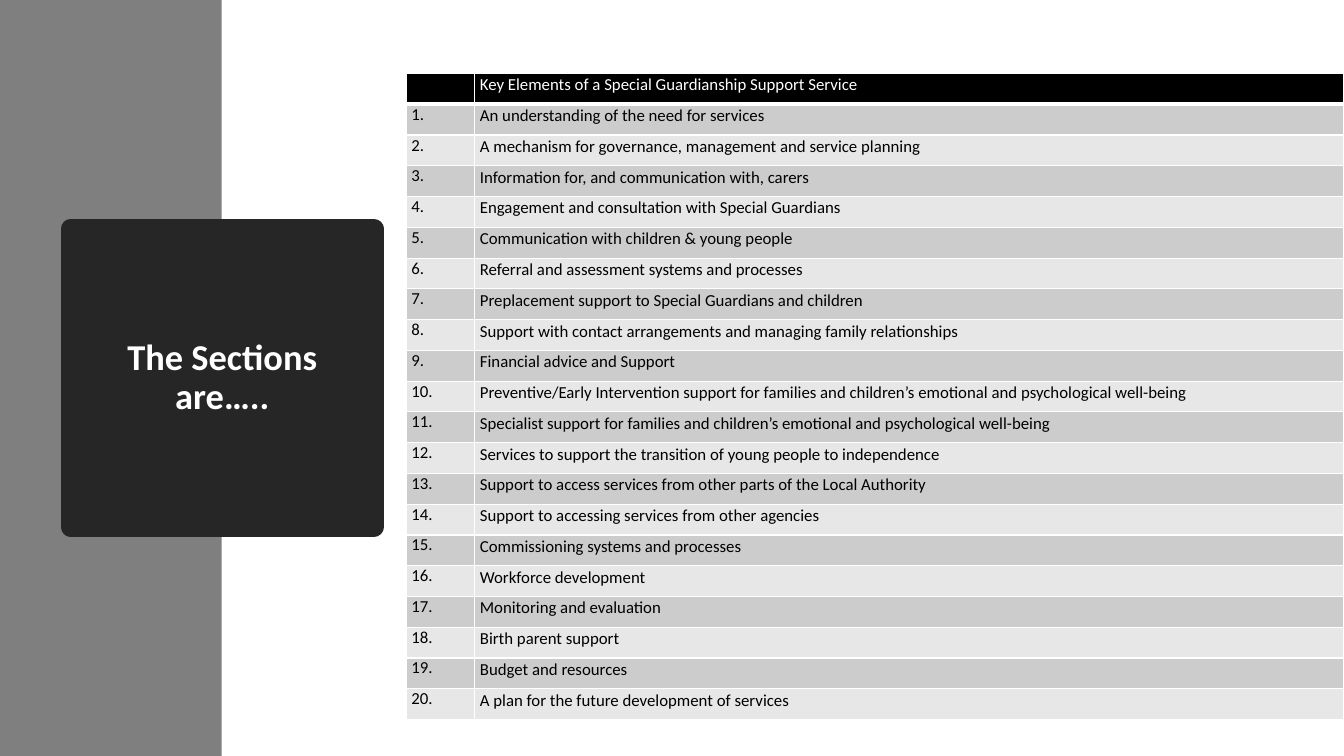
"""Build the slide listing the sections of a support service."""
from dataclasses import dataclass

from lxml import etree
from pptx import Presentation
from pptx.dml.color import RGBColor
from pptx.enum.shapes import MSO_SHAPE
from pptx.enum.text import MSO_ANCHOR, PP_ALIGN
from pptx.oxml.ns import qn
from pptx.util import Inches, Pt

RECT = MSO_SHAPE.RECTANGLE
MIDDLE = MSO_ANCHOR.MIDDLE
LEFT, CENTER, JUSTIFY = PP_ALIGN.LEFT, PP_ALIGN.CENTER, PP_ALIGN.JUSTIFY

WHITE = RGBColor(0xFF, 0xFF, 0xFF)
BLACK = RGBColor(0x00, 0x00, 0x00)
GRAY = RGBColor(0x7F, 0x7F, 0x7F)
CHARCOAL = RGBColor(0x26, 0x26, 0x26)
BAND_DARK = RGBColor(0xCC, 0xCC, 0xCC)
BAND_LIGHT = RGBColor(0xE7, 0xE7, 0xE7)

HEADING = "Key Elements of a Special Guardianship Support Service"
SECTIONS = [
    "An understanding of the need for services",
    "A mechanism for governance, management and service planning",
    "Information for, and communication with, carers",
    "Engagement and consultation with Special Guardians",
    "Communication with children & young people",
    "Referral and assessment systems and processes",
    "Preplacement support to Special Guardians and children",
    "Support with contact arrangements and managing family relationships",
    "Financial advice and Support",
    "Preventive/Early Intervention support for families and children’s emotional and psychological well-being",
    "Specialist support for families and children’s emotional and psychological well-being",
    "Services to support the transition of young people to independence",
    "Support to access services from other parts of the Local Authority",
    "Support to accessing services from other agencies",
    "Commissioning systems and processes",
    "Workforce development",
    "Monitoring and evaluation",
    "Birth parent support",
    "Budget and resources",
    "A plan for the future development of services",
]
COLUMN_WIDTHS = [0.68, 8.62]
TABLE_HEIGHT = 6.41
NUMBER_FORMAT = {"alignment": JUSTIFY}
SECTION_FORMAT = {"alignment": LEFT, "line_spacing": 1.07, "space_after": Pt(8)}
CELL_MARGINS = {
    "margin_left": Inches(0.05),
    "margin_right": Inches(0.05),
    "margin_top": 0,
    "margin_bottom": 0,
}


@dataclass
class Panel:
    left: float
    top: float
    width: float
    height: float
    fill: RGBColor


@dataclass
class Row:
    number: str
    text: str
    fill: RGBColor
    color: RGBColor = BLACK
    bottom_border: float = 1


def set_attributes(target, values: dict) -> None:
    for name, value in values.items():
        setattr(target, name, value)


def add_text(p, text: str, size: float, color: RGBColor, bold: bool = False) -> None:
    r = p.add_run()
    r.text = text
    set_attributes(r.font, {"name": "Calibri", "size": Pt(size), "bold": bold})
    r.font.color.rgb = color


def add_panel(slide, panel: Panel):
    sp = slide.shapes.add_shape(RECT, Inches(panel.left), Inches(panel.top),
                                Inches(panel.width), Inches(panel.height))
    sp.shadow.inherit = False
    sp.fill.solid()
    sp.fill.fore_color.rgb = panel.fill
    sp.line.fill.background()
    return sp


def add_title(slide, panel: Panel, text: str) -> None:
    sp = add_panel(slide, panel)
    sp.line.color.rgb = panel.fill
    sp.line.width = Pt(13.75)
    etree.SubElement(sp._element.spPr.find(qn("a:ln")), qn("a:round"))
    tf = sp.text_frame
    set_attributes(tf, {"word_wrap": True, "vertical_anchor": MIDDLE,
                        "margin_left": Inches(0.2), "margin_right": Inches(0.2)})
    p = tf.paragraphs[0]
    set_attributes(p, {"alignment": CENTER, "line_spacing": 0.9})
    add_text(p, text, 26, WHITE, True)


def add_borders(cell, bottom: float) -> None:
    tc_pr = cell._tc.get_or_add_tcPr()
    for side, width in {"L": 1, "R": 1, "T": 1, "B": bottom}.items():
        ln = etree.SubElement(tc_pr, qn(f"a:ln{side}"), w=str(Pt(width)))
        fill = etree.SubElement(ln, qn("a:solidFill"))
        etree.SubElement(fill, qn("a:srgbClr"), val=str(WHITE))


def fill_cell(cell, text: str, row: Row, paragraph_format: dict) -> None:
    set_attributes(cell, CELL_MARGINS)
    add_borders(cell, row.bottom_border)
    cell.fill.solid()
    cell.fill.fore_color.rgb = row.fill
    p = cell.text_frame.paragraphs[0]
    set_attributes(p, paragraph_format)
    if text:
        add_text(p, text, 12, row.color)
    else:
        etree.SubElement(p._p, qn("a:endParaRPr"), sz="1200")


def add_sections_table(slide, rows: list[Row]) -> None:
    table = slide.shapes.add_table(
        len(rows), len(COLUMN_WIDTHS), Inches(4.03), Inches(0.73),
        Inches(sum(COLUMN_WIDTHS)), Inches(TABLE_HEIGHT)).table
    for column, width in zip(table.columns, COLUMN_WIDTHS):
        column.width = Inches(width)
    for i, row in enumerate(rows):
        table.rows[i].height = Inches(TABLE_HEIGHT / len(rows))
        fill_cell(table.cell(i, 0), row.number, row, NUMBER_FORMAT)
        fill_cell(table.cell(i, 1), row.text, row, SECTION_FORMAT)


def main() -> None:
    prs = Presentation()
    prs.slide_width, prs.slide_height = Inches(13.33), Inches(7.5)
    s = prs.slides.add_slide(prs.slide_layouts[6])
    add_panel(s, Panel(0, 0, 2.2, 7.5, GRAY))
    add_title(s, Panel(0.7, 2.27, 3.01, 2.96, CHARCOAL), "The Sections are…..")
    rows = [Row("", HEADING, BLACK, WHITE, 3)]
    for number, text in enumerate(SECTIONS, 1):
        rows.append(Row(f"{number}.", text, BAND_DARK if number % 2 else BAND_LIGHT))
    add_sections_table(s, rows)
    prs.save("out.pptx")


if __name__ == "__main__":
    main()
